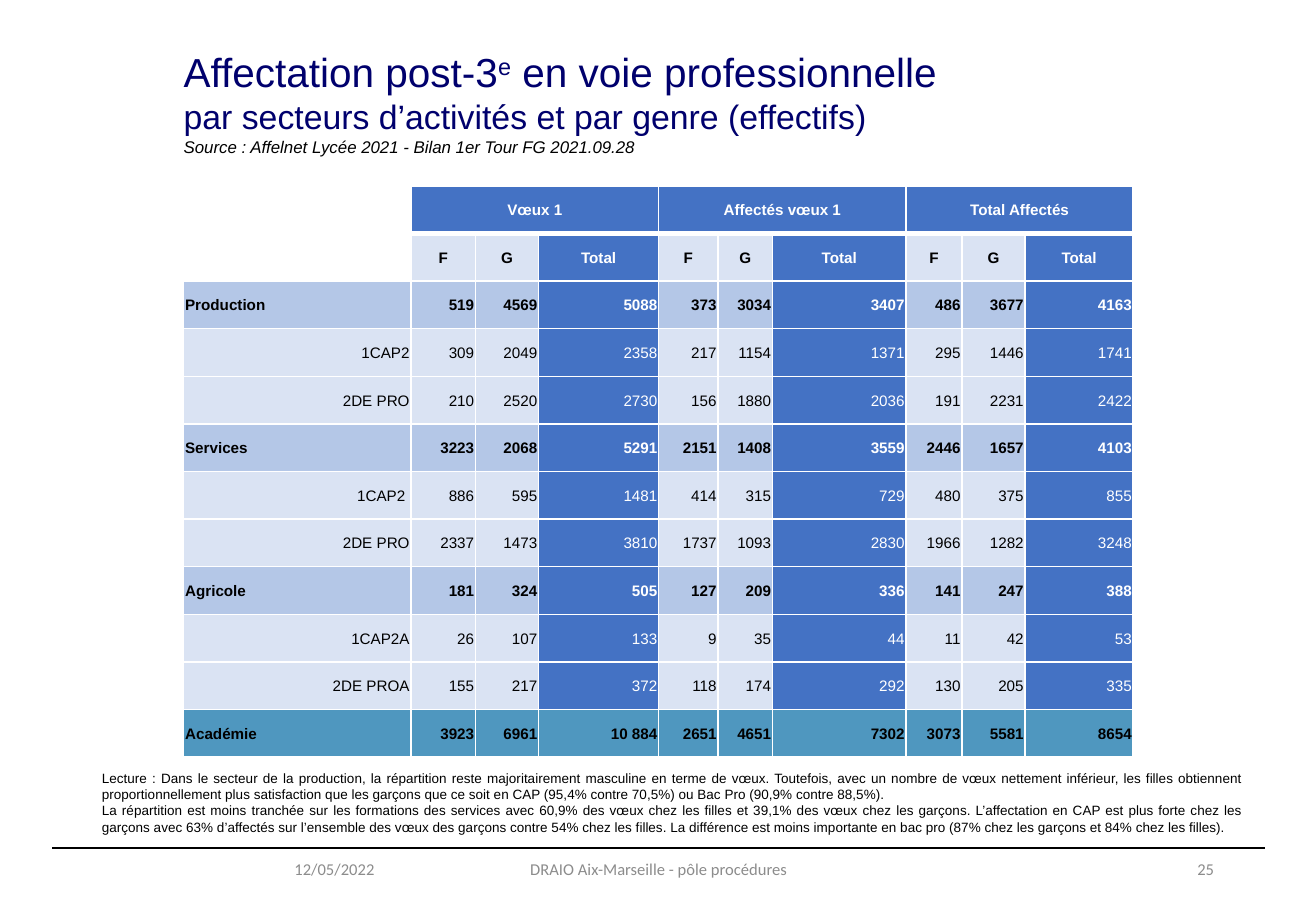
import pptx
import pptx.dml.color
import pptx.enum.shapes
import pptx.enum.text
import pptx.oxml
import pptx.oxml.ns
import pptx.util

Cm = pptx.util.Cm
Pt = pptx.util.Pt
Align = pptx.enum.text.PP_ALIGN
Anchor = pptx.enum.text.MSO_ANCHOR


class Theme:
    """Colours and type styles of the slide."""
    white, black = "FFFFFF", "000000"
    dark, mid, pale, sum = "4472C4", "B4C7E7", "DAE3F3", "4F97BF"
    title = {"name": "Arial", "size": Pt(24), "color": "00006D"}
    sub = {**title, "size": Pt(20)}
    source = {"name": "Arial", "size": Pt(10), "italic": True, "color": black}
    cell = {"name": "Arial", "size": Pt(9), "color": black}
    note = {"name": "Arial", "size": Pt(8), "color": black}
    foot = {"name": "Calibri", "size": Pt(9.8), "color": "8C8C8C"}


WIDTHS = (4.75, 1.35, 1.32, 2.51, 1.24, 1.14, 2.79, 1.17, 1.32, 2.26)
GROUPS = ("Vœux 1", "Affectés vœux 1", "Total Affectés")
SECTORS = ("Production", "Services", "Agricole")
ROWS = (
    ("Production", "519", "4569", "5088", "373", "3034", "3407", "486", "3677", "4163"),
    ("1CAP2", "309", "2049", "2358", "217", "1154", "1371", "295", "1446", "1741"),
    ("2DE PRO", "210", "2520", "2730", "156", "1880", "2036", "191", "2231", "2422"),
    ("Services", "3223", "2068", "5291", "2151", "1408", "3559", "2446", "1657", "4103"),
    ("1CAP2 ", "886", "595", "1481", "414", "315", "729", "480", "375", "855"),
    ("2DE PRO", "2337", "1473", "3810", "1737", "1093", "2830", "1966", "1282", "3248"),
    ("Agricole", "181", "324", "505", "127", "209", "336", "141", "247", "388"),
    ("1CAP2A", "26", "107", "133", "9", "35", "44", "11", "42", "53"),
    ("2DE PROA", "155", "217", "372", "118", "174", "292", "130", "205", "335"),
    ("Académie", "3923", "6961", "10 884", "2651", "4651", "7302", "3073", "5581", "8654"),
)
NOTES = (
    "Lecture : Dans le secteur de la production, la répartition reste majoritairement "
    "masculine en terme de vœux. Toutefois, avec un nombre de vœux nettement inférieur, "
    "les filles obtiennent proportionnellement plus satisfaction que les garçons que ce "
    "soit en CAP (95,4% contre 70,5%) ou Bac Pro (90,9% contre 88,5%).",
    "La répartition est moins tranchée sur les formations des services avec 60,9% des "
    "vœux chez les filles et 39,1% des vœux chez les garçons. L’affectation en CAP est "
    "plus forte chez les garçons avec 63% d’affectés sur l’ensemble des vœux des garçons "
    "contre 54% chez les filles. La différence est moins importante en bac pro (87% chez "
    "les garçons et 84% chez les filles).",
)


def rgb(code):
    """Turn a hex code into a colour."""
    return pptx.dml.color.RGBColor.from_string(code)


def write(para, text, style):
    """Add a run in the given style."""
    run = para.add_run()
    run.text = text
    for key, value in style.items():
        if key == "color":
            run.font.color.rgb = rgb(value)
        else:
            setattr(run.font, key, value)
    return run


def panel(slide, box, lines, form, align=Align.LEFT):
    """Add a text box whose lines are lists of (text, style) runs."""
    frame = slide.shapes.add_textbox(*map(Cm, box)).text_frame
    for key, value in {"word_wrap": True, **form}.items():
        setattr(frame, key, value)
    for i, line in enumerate(lines):
        para = frame.paragraphs[0] if i == 0 else frame.add_paragraph()
        para.alignment = align
        for text, style in line:
            run = write(para, text, style)
            if text == "e":
                run.font._element.set("baseline", "30000")


def header(slide, box):
    """Place the title, subtitle and source."""
    lines = (
        [(text, Theme.title) for text in
         ("Affectation post-3", "e", " en voie professionnelle")],
        [("par secteurs d’activités et par genre (effectifs)", Theme.sub)],
        [("Source : Affelnet Lycée 2021 - Bilan 1er Tour FG 2021.09.28", Theme.source)],
    )
    form = {"margin_left": 0, "margin_right": 0, "margin_top": Cm(0.08), "margin_bottom": 0}
    panel(slide, box, lines, form)


def edge(cell, row):
    """Draw white cell borders, thick under the first row."""
    thick = {(0, "B"), (1, "T")}
    props = cell._tc.get_or_add_tcPr()
    for i, side in enumerate("LRTB"):
        width = Pt(3 if (row, side) in thick else 1)
        props.insert(i, pptx.oxml.parse_xml(
            f'<a:ln{side} {pptx.oxml.ns.nsdecls("a")} w="{width}"><a:solidFill>'
            f'<a:srgbClr val="{Theme.white}"/></a:solidFill></a:ln{side}>'))


def look(row, col, label):
    """Give the fill, text colour, weight and alignment of a cell."""
    head, total = row < 2, col > 0 and col % 3 == 0
    last = label == "Académie"
    main = last or label in SECTORS
    if last:
        fill = Theme.sum
    elif head and col == 0:
        fill = Theme.white
    elif row == 0 or total:
        fill = Theme.dark
    else:
        fill = Theme.mid if main else Theme.pale
    ink = Theme.white if fill == Theme.dark else Theme.black
    align = Align.CENTER if head else Align.LEFT if main and col == 0 else Align.RIGHT
    return fill, ink, head or main, align


def counts(slide, box):
    """Place the table of counts by sector and gender."""
    top = ("",) + tuple(text for name in GROUPS for text in (name, "", ""))
    rows = (top, ("",) + ("F", "G", "Total") * len(GROUPS)) + ROWS
    table = slide.shapes.add_table(len(rows), len(WIDTHS), *map(Cm, box)).table
    table.first_row = table.horz_banding = False
    for col, width in zip(table.columns, WIDTHS):
        col.width = Cm(width)
    form = {"margin_left": Cm(0.03), "margin_right": Cm(0.03), "margin_top": Cm(0.03),
            "margin_bottom": 0, "vertical_anchor": Anchor.MIDDLE}
    for r, row in enumerate(rows):
        table.rows[r].height = Cm(box[3] / len(rows))
        for c, text in enumerate(row):
            cell = table.cell(r, c)
            fill, ink, bold, align = look(r, c, row[0])
            for key, value in form.items():
                setattr(cell, key, value)
            cell.fill.solid()
            cell.fill.fore_color.rgb = rgb(fill)
            edge(cell, r)
            para = cell.text_frame.paragraphs[0]
            para.alignment = align
            if text:
                write(para, text, {**Theme.cell, "color": ink, "bold": bold})
    for c in range(1, len(WIDTHS), 3):
        table.cell(0, c).merge(table.cell(0, c + 2))


def notes(slide, box):
    """Place the reading notes."""
    panel(slide, box, [[(text, Theme.note)] for text in NOTES], {}, Align.JUSTIFY)


def footer(slide, box):
    """Place the rule, date, author and page number."""
    left, top, width, high = box
    rule = slide.shapes.add_connector(
        pptx.enum.shapes.MSO_CONNECTOR.STRAIGHT,
        Cm(left), Cm(top), Cm(left + width), Cm(top))
    rule.line.color.rgb = rgb(Theme.black)
    rule.line.width = Pt(0.8)
    rule._element.spPr.append(
        pptx.oxml.parse_xml(f'<a:effectLst {pptx.oxml.ns.nsdecls("a")}/>'))
    parts = (
        (0.79, 6.2, "12/05/2022", Align.RIGHT),
        (8.03, 9.3, "DRAIO Aix-Marseille - pôle procédures", Align.CENTER),
        (18.34, 6.2, "25", Align.RIGHT),
    )
    for shift, wide, text, align in parts:
        panel(slide, (left + shift, top - 0.08, wide, high), [[(text, Theme.foot)]],
              {"vertical_anchor": Anchor.MIDDLE}, align)


def main():
    """Build and save the slide."""
    deck = pptx.Presentation()
    deck.slide_width, deck.slide_height = Cm(27.51), Cm(19.05)
    slide = deck.slides.add_slide(deck.slide_layouts[6])
    header(slide, (3.84, 0.91, 16.43, 2.67))
    counts(slide, (3.84, 3.89, sum(WIDTHS), 11.94))
    footer(slide, (1.09, 17.73, 25.35, 1.02))
    notes(slide, (1.88, 15.98, 24.38, 1.63))
    deck.save("out.pptx")


if __name__ == "__main__":
    main()
